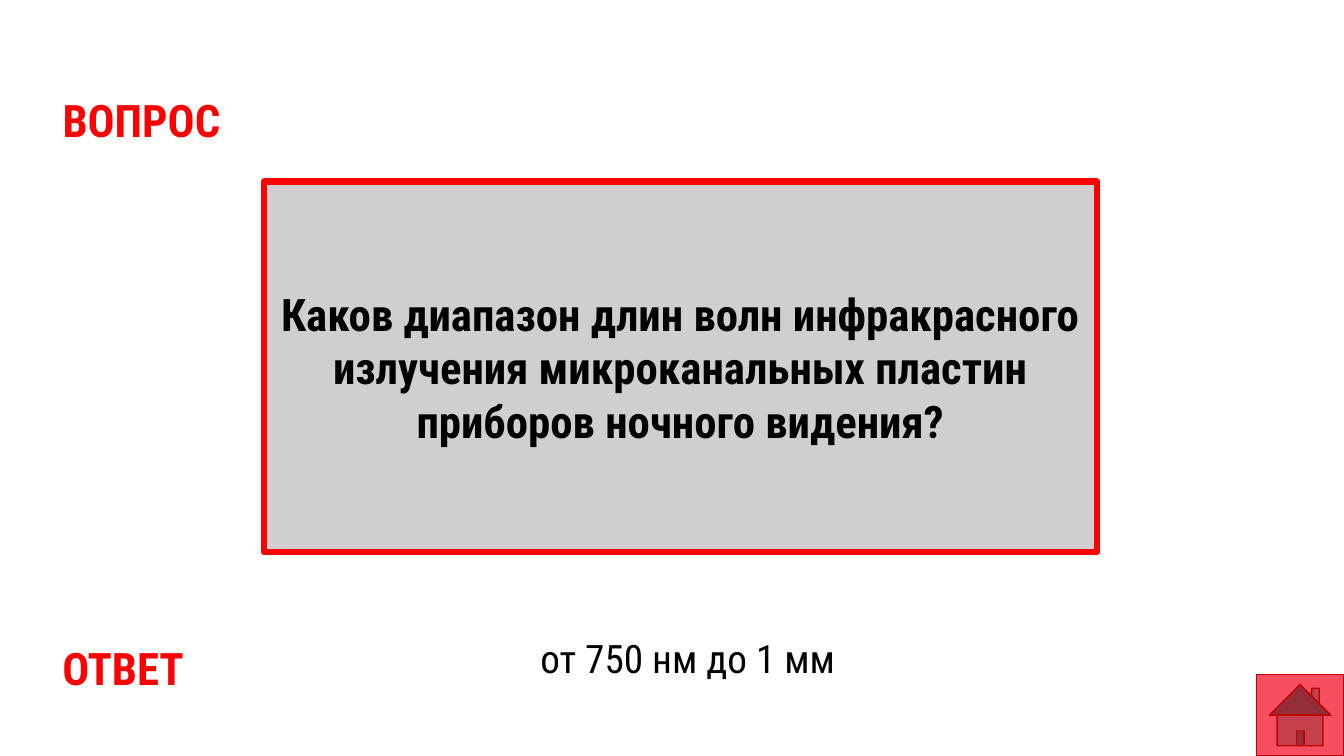
"""Build a quiz slide with a question, its answer and a home button."""
from dataclasses import dataclass

from pptx import Presentation
from pptx import util as u
from pptx.dml import color
from pptx.enum import shapes, text

FONT = "Roboto Condensed"
HEX = {"red": "FF0000", "black": "000000", "grey": "D0CECE",
       "pink": "F74F5F", "wine": "C00000"}


@dataclass
class Box:
    """Place of an item in inches."""
    left: float
    top: float
    width: float
    height: float

    def size(self) -> list:
        """Give the four lengths."""
        return [u.Inches(n) for n in
                (self.left, self.top, self.width, self.height)]


@dataclass
class Label:
    """Words with their place and look."""
    words: str
    box: Box
    tint: str = "red"
    points: int = 32
    bold: bool = True
    align: text.PP_ALIGN = text.PP_ALIGN.LEFT


@dataclass
class Panel:
    """Preset shape with its fill and line."""
    kind: shapes.MSO_SHAPE
    box: Box
    fill: str
    edge: str
    weight: float


MID = text.PP_ALIGN.CENTER
HEAD = Label("ВОПРОС", Box(0.52, 0.87, 5.18, 0.64))
ASK = Label("Каков диапазон длин волн инфракрасного излучения "
            "микроканальных пластин приборов ночного видения?",
            Box(2.62, 1.8, 8.26, 3.68), "black", align=MID)
NOTES = [
    Label("ОТВЕТ", Box(0.52, 6.31, 1.65, 0.64)),
    Label("от 750 нм до 1 мм", Box(2.29, 6.24, 9.06, 0.57),
          "black", 28, False, MID),
]
FRAME = Panel(shapes.MSO_SHAPE.RECTANGLE, ASK.box, "grey", "red", 4.5)
HOME = Panel(shapes.MSO_SHAPE.ACTION_BUTTON_HOME,
             Box(12.46, 6.69, 0.87, 0.81), "pink", "wine", 1)


def paint(name: str) -> color.RGBColor:
    """Look up a colour by name."""
    return color.RGBColor.from_string(HEX[name])


def write(shape, label: Label, anchor=text.MSO_ANCHOR.TOP) -> None:
    """Put the words of a label in a shape."""
    frame = shape.text_frame
    frame.word_wrap = True
    frame.auto_size = text.MSO_AUTO_SIZE.NONE
    frame.vertical_anchor = anchor
    para = frame.paragraphs[0]
    para.alignment = label.align
    run = para.add_run()
    run.text = label.words
    font = run.font
    font.name, font.size, font.bold = FONT, u.Pt(label.points), label.bold
    font.color.rgb = paint(label.tint)


def draw(slide, panel: Panel):
    """Add a panel and return its shape."""
    shape = slide.shapes.add_shape(panel.kind, *panel.box.size())
    shape.shadow.inherit = False
    shape.fill.solid()
    shape.fill.fore_color.rgb = paint(panel.fill)
    shape.line.color.rgb = paint(panel.edge)
    shape.line.width = u.Pt(panel.weight)
    return shape


def main() -> None:
    """Make the slide and save it."""
    deck = Presentation()
    deck.slide_width, deck.slide_height = u.Inches(13.33), u.Inches(7.5)
    slide = deck.slides.add_slide(deck.slide_layouts[5])
    title = slide.shapes.title
    title.left, title.top, title.width, title.height = HEAD.box.size()
    write(title, HEAD)
    write(draw(slide, FRAME), ASK, text.MSO_ANCHOR.MIDDLE)
    for note in NOTES:
        write(slide.shapes.add_textbox(*note.box.size()), note)
    draw(slide, HOME)
    deck.save("out.pptx")


if __name__ == "__main__":
    main()
